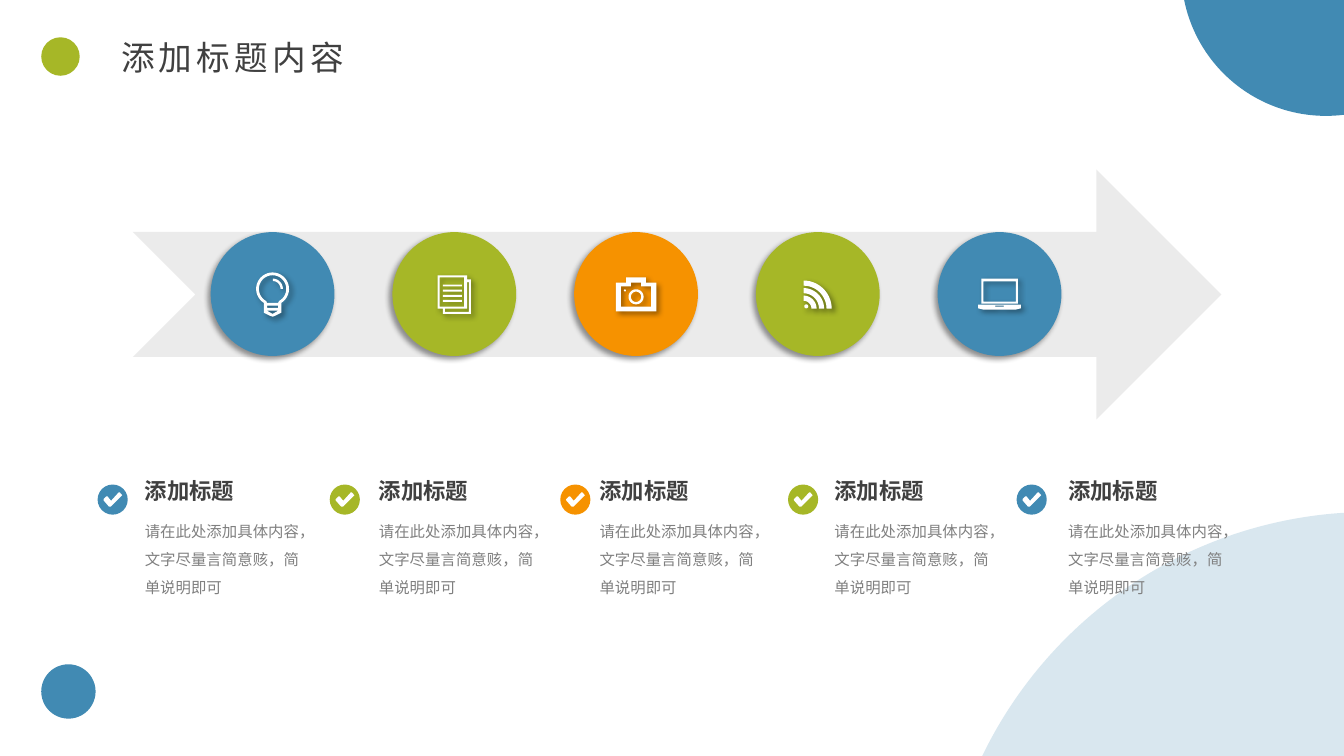
from math import cos, radians, sin
from lxml import etree
from pptx import Presentation
from pptx import util as u
from pptx.dml import color
from pptx.enum import shapes, text
from pptx.oxml import ns

BLUE, GREEN, ORANGE, WHITE = "418AB3", "A6B727", "F69200", "FFFFFF"
HUES = [BLUE, GREEN, ORANGE, GREEN, BLUE]
KIND = shapes.MSO_SHAPE


def paint(item, hue, alpha=100, angle=None):
    item.shadow.inherit = False
    item.line.fill.background()
    item.fill.solid()
    item.fill.fore_color.rgb = color.RGBColor.from_string(hue)
    props = item._element.spPr
    if alpha < 100:
        tint = props.find(".//" + ns.qn("a:srgbClr"))
        etree.SubElement(tint, ns.qn("a:alpha"), val=str(alpha * 1000))
    if angle is not None:
        shade = etree.SubElement(
            props.find(ns.qn("a:effectLst")), ns.qn("a:outerShdw"),
            blurRad=str(u.Pt(4)), dist=str(u.Pt(3)), dir=str(angle * 60000),
            algn="ctr", rotWithShape="0")
        black = etree.SubElement(shade, ns.qn("a:srgbClr"), val="000000")
        etree.SubElement(black, ns.qn("a:alpha"), val="40000")


def arc(x, y, size, start=0, end=360):
    turns = [radians(start + (end - start) * n / 32) for n in range(33)]
    return [(x + size * cos(t), y + size * sin(t)) for t in turns]


# Icon outlines use tenths of a millimetre around the icon centre
bulb = [
    arc(0, -13, 41.5, 122, 418) + [(22, 47), (6, 55), (0, 57), (-6, 55), (-22, 47)],
    arc(0, -13, 34.5, 118, 422) + [(14, 22), (-14, 22)],
    arc(0, -13, 26, -88, 0) + arc(0, -13, 20, 0, -88),
    [(-14, 29), (14, 29), (14, 35), (-14, 35)],
    [(-14, 42), (14, 42), (0, 50)],
]
pages = [
    [(-42, -47), (32, -47), (32, -37), (42, -37), (42, 50), (-29, 50), (-29, 37), (-42, 37)],
    [(-37, -42), (25, -42), (25, 32), (-37, 32)],
    [(37, 45), (-24, 45), (-24, 37), (32, 37), (32, -30), (37, -30)],
] + [[(-29, y), (19, y), (19, y + 5), (-29, y + 5)] for y in (-24, -11, 2, 15)]
camera = [
    [(-51, -29), (-25, -29), (-25, -42), (25, -42), (25, -29), (51, -29), (51, 44), (-51, 44)],
    [(-38, -19), (-13, -19), (-13, -29), (13, -29), (13, -19), (38, -19), (38, 32), (-38, 32)],
    arc(0, 7, 19), arc(0, 7, 13), arc(-28, -9, 2.5),
]
feed = [arc(-36, 37, r, -90, 0) + arc(-36, 37, r - 13, 0, -90) for r in (71, 52, 33)]
feed.append(arc(-29, 31, 5))
laptop = [
    [(-46, -39), (46, -39), (46, 24), (-46, 24)],
    [(-41, -32), (41, -32), (41, 19), (-41, 19)],
    [(-54, 27), (54, 27), (54, 36), (42, 39), (-42, 39), (-54, 36)],
    [(-11, 29), (11, 29), (11, 32), (-11, 32)],
]
tick = [[(24, -11), (-5, 18), (-9, 18), (-23, 2), (-23, -1), (-16, -8), (-13, -8),
         (-4, 3), (15, -18), (18, -18)]]

deck = Presentation()
deck.slide_width, deck.slide_height = u.Cm(33.87), u.Cm(19.05)
slide = deck.slides.add_slide(deck.slide_layouts[5])
art = slide.shapes

for x, y, size, hue, alpha in [
    (23.67, 12.9, 21.77, BLUE, 20),
    (29.77, -4.37, 7.29, BLUE, 100),
    (1.04, 16.74, 1.37, BLUE, 100),
    (1.04, 0.94, 0.97, GREEN, 100),
]:
    dot = art.add_shape(KIND.FLOWCHART_CONNECTOR, u.Cm(x), u.Cm(y), u.Cm(size), u.Cm(size))
    paint(dot, hue, alpha)

arrow = art.add_shape(KIND.NOTCHED_RIGHT_ARROW, u.Cm(3.35), u.Cm(4.27), u.Cm(27.43), u.Cm(6.3))
paint(arrow, "D9D9D9", 50)

marks = [(6.87 + 4.58 * n, 7.41, 3.12, icon, 135, 45)
         for n, icon in enumerate([bulb, pages, camera, feed, laptop])]
marks += [(x, 12.59, 0.76, tick, None, None) for x in (2.84, 8.69, 14.5, 20.24, 26)]
for (x, y, size, icon, left, right), hue in zip(marks, HUES * 2):
    disc = art.add_shape(KIND.OVAL, u.Cm(x - size / 2), u.Cm(y - size / 2), u.Cm(size), u.Cm(size))
    paint(disc, hue, angle=left)
    pen = None
    for loop in icon:
        spots = [(px * 10, py * 10) for px, py in loop]
        if pen is None:
            pen = art.build_freeform(*spots[0], scale=u.Cm(0.001))
        else:
            pen.move_to(*spots[0])
        pen.add_line_segments(spots[1:], close=True)
    paint(pen.convert_to_shape(u.Cm(x), u.Cm(y)), WHITE, angle=right)

title = art.title
title.left, title.top, title.width, title.height = u.Cm(2.8), u.Cm(0.79), u.Cm(6.6), u.Cm(1.28)
texts = [(title, "添加标题内容", 24, "404040", False, "Arial")]
for x in (3.4, 9.3, 14.86, 20.78, 26.67):
    for y, wide, high, words, size, hue, bold in [
        (12.78, 4.67, 2.36, "请在此处添加具体内容，文字尽量言简意赅，简单说明即可", 11, "808080", False),
        (11.89, 3.02, 0.94, "添加标题", 16, "404040", True),
    ]:
        box = art.add_textbox(u.Cm(x), u.Cm(y), u.Cm(wide), u.Cm(high))
        texts.append((box, words, size, hue, bold, "Noto Sans CJK SC"))

for box, words, size, hue, bold, face in texts:
    frame = box.text_frame
    frame.text = words
    frame.word_wrap = True
    frame.auto_size = text.MSO_AUTO_SIZE.SHAPE_TO_FIT_TEXT
    frame.vertical_anchor = text.MSO_ANCHOR.TOP
    para = frame.paragraphs[0]
    if size == 11:
        para.line_spacing = u.Pt(20)
    run = para.runs[0]
    run.font.size = u.Pt(size)
    run.font.bold = bold
    run.font.name = face
    run.font.color.rgb = color.RGBColor.from_string(hue)
    etree.SubElement(run.font._element, ns.qn("a:ea"), typeface=face)

head = title.text_frame.paragraphs[0]
head.alignment = text.PP_ALIGN.JUSTIFY
head.runs[0].font._element.set("spc", "300")

deck.save("out.pptx")
